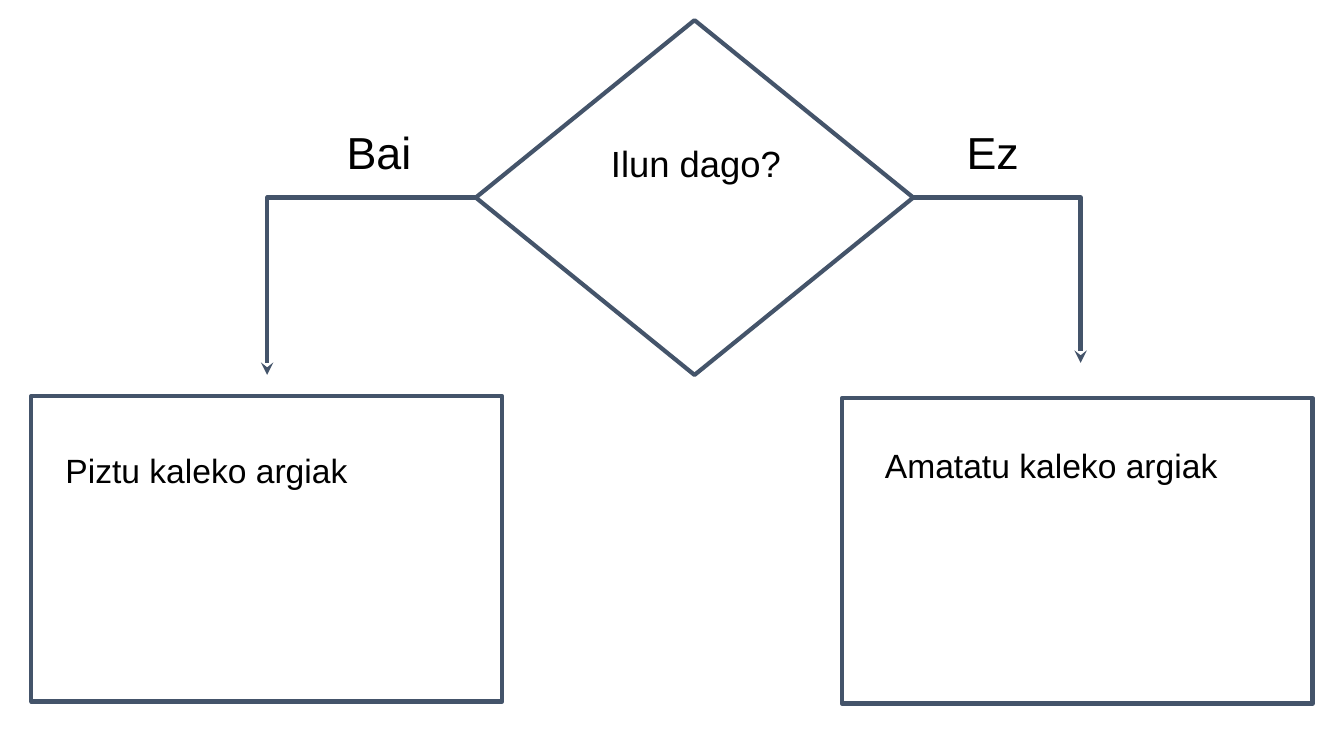
from lxml.etree import SubElement
from pptx import Presentation
from pptx.dml.color import RGBColor
from pptx.enum.shapes import MSO_CONNECTOR, MSO_SHAPE
from pptx.enum.text import MSO_ANCHOR, PP_ALIGN
from pptx.oxml.ns import qn
from pptx.util import Inches, Pt

COLORS = {"outline": "44546A", "text": "000000"}

flowchart = Presentation()
flowchart.slide_width = Inches(13.33)
flowchart.slide_height = Inches(7.5)
slide = flowchart.slides.add_slide(flowchart.slide_layouts[6])
column = flowchart.slide_width / 100
row = flowchart.slide_height / 100


def place(left, top, width, height):
    return [round(share * unit) for share, unit in
            zip((left, top, width, height), (column, row, column, row))]


def draw_outline(line):
    line.color.rgb = RGBColor.from_string(COLORS["outline"])
    line.width = Pt(3)


action_width, action_height = 35.03, 40.4
question_left, question_top, question_width, question_height = 35.4, 2.67, 32.55, 46.93
question_middle = question_top + question_height / 2

steps = [
    (MSO_SHAPE.RECTANGLE, 62.63, 52.67, action_width, action_height),
    (MSO_SHAPE.DIAMOND, question_left, question_top, question_width, question_height),
    (MSO_SHAPE.RECTANGLE, 2.33, 52.4, action_width, action_height),
]
for outline, *area in steps:
    step = slide.shapes.add_shape(outline, *place(*area))
    step.shadow.inherit = False
    step.fill.background()
    draw_outline(step.line)

branches = [
    (question_left, 19.88, 49.6),
    (question_left + question_width, 80.4, 48),
]
for start, end, tip in branches:
    branch = slide.shapes.add_connector(
        MSO_CONNECTOR.ELBOW, *place(start, question_middle, end, tip))
    draw_outline(branch.line)
    properties = branch._element.spPr
    properties.find(qn("a:prstGeom")).set("prst", "bentConnector2")
    SubElement(branch.line._get_or_add_ln(), qn("a:tailEnd"), type="stealth")
    SubElement(properties, qn("a:effectLst"))

wordings = [
    ("Ez", 32, PP_ALIGN.LEFT, 71.18, 15.2, 7.13, 8.27),
    ("Ilun dago?", 26, PP_ALIGN.CENTER, 42.38, 17.33, 18.83, 16.4),
    ("Piztu kaleko argiak", 24, PP_ALIGN.LEFT, 4.13, 58.13, 30, 30.13),
    ("Amatatu kaleko argiak", 24, PP_ALIGN.LEFT, 65.1, 57.47, 30, 30.13),
    ("Bai", 32, PP_ALIGN.LEFT, 25.05, 15.2, 9, 8.27),
]
for wording, size, alignment, *area in wordings:
    frame = slide.shapes.add_textbox(*place(*area)).text_frame
    frame.word_wrap = True
    frame.vertical_anchor = MSO_ANCHOR.TOP
    frame.margin_left = frame.margin_right = Inches(0.1)
    frame.margin_top = frame.margin_bottom = Inches(0.1)
    frame.text = wording
    paragraph = frame.paragraphs[0]
    paragraph.alignment = alignment
    font = paragraph.runs[0].font
    font.name = "Arial"
    font.size = Pt(size)
    font.color.rgb = RGBColor.from_string(COLORS["text"])

flowchart.save("out.pptx")
